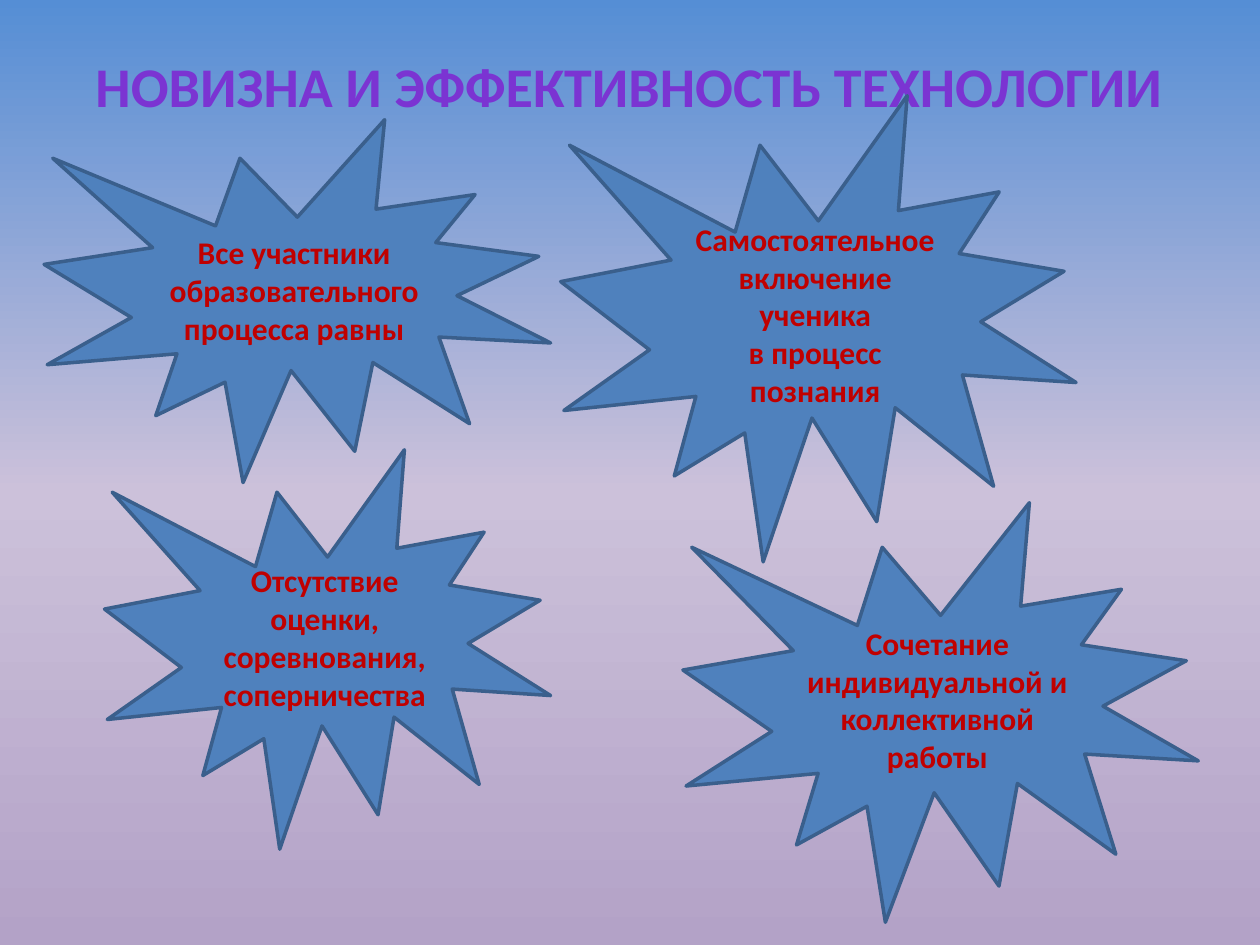
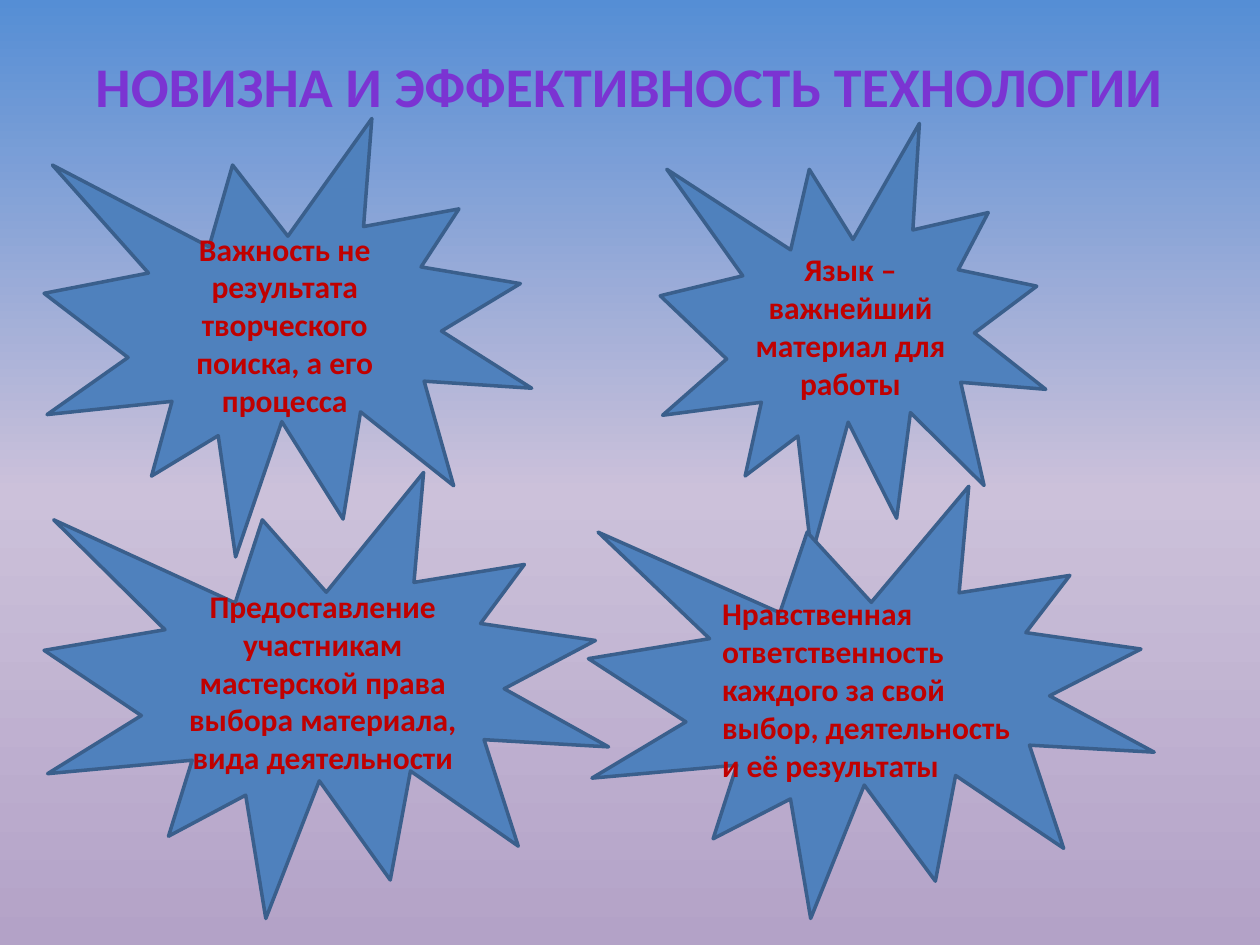
from copy import deepcopy

from pptx import Presentation
from pptx.dml.color import RGBColor
from pptx.enum.shapes import MSO_SHAPE as Shape
from pptx.enum.text import MSO_ANCHOR as Anchor, MSO_AUTO_SIZE as AutoSize, PP_ALIGN as Align
from pptx.oxml.ns import qn
from pptx.util import Inches, Pt

FONT = "Calibri"
PURPLE = RGBColor(0x7B, 0x34, 0xD2)
RED = RGBColor(0xC0, 0x00, 0x00)
BLUE = RGBColor(0x4F, 0x81, 0xBD)
DARK_BLUE = RGBColor(0x3A, 0x5F, 0x8C)
SKY = [
    (0, RGBColor(0x55, 0x8E, 0xD5)),
    (0.52, RGBColor(0xCC, 0xC1, 0xDA)),
    (1, RGBColor(0xB3, 0xA2, 0xC7)),
]

HEADING = "НОВИЗНА И ЭФФЕКТИВНОСТЬ ТЕХНОЛОГИИ"
HEADING_BOX = (-2, 0.36, 13.99, 1.18)

PAGES = [
    [
        ((0.35, 0.95, 4.02, 2.88), ["Все участники образовательного процесса равны"], Align.CENTER),
        ((0.83, 3.57, 3.54, 3.17), ["Отсутствие оценки, соревнования, соперничества"], Align.CENTER),
        ((4.45, 0.76, 4.09, 3.7),
         ["Самостоятельное", "включение ученика", "в процесс", "познания"], Align.CENTER),
        ((5.42, 3.99, 4.09, 3.33),
         ["Сочетание индивидуальной и коллективной работы"], Align.CENTER),
    ],
    [
        ((0.35, 0.94, 3.87, 3.48),
         ["Важность не результата творческого поиска, а его процесса"], Align.CENTER),
        ((0.35, 3.75, 4.48, 3.54),
         ["Предоставление участникам мастерской права выбора материала, вида деятельности"],
         Align.CENTER),
        ((5.24, 0.98, 3.06, 3.43), ["Язык – важнейший материал для работы"], Align.CENTER),
        ((4.67, 3.86, 4.49, 3.43),
         ["Нравственная ответственность каждого за свой выбор, деятельность и её результаты"],
         Align.LEFT),
    ],
]


def write(frame, lines, size=18, color=RED, align=Align.CENTER, anchor=Anchor.MIDDLE):
    frame.word_wrap = True
    frame.auto_size = AutoSize.NONE
    frame.vertical_anchor = anchor
    frame.text = "\n".join(lines)
    for paragraph in frame.paragraphs:
        paragraph.alignment = align
        font = paragraph.runs[0].font
        font.name, font.size, font.bold = FONT, Pt(size), True
        font.color.rgb = color


def paint_sky(master):
    fill = master.background.fill
    fill.gradient()
    fill.gradient_angle = 270
    stops = master.element.cSld.find(".//" + qn("a:gsLst"))
    stops.append(deepcopy(stops[0]))
    for stop, (position, color) in zip(fill.gradient_stops, SKY):
        stop.position = position
        stop.color.rgb = color


def add_heading(slide):
    heading = slide.shapes.title
    heading.left, heading.top, heading.width, heading.height = map(Inches, HEADING_BOX)
    write(heading.text_frame, [HEADING], size=32, color=PURPLE, anchor=Anchor.TOP)


def add_burst(slide, box, lines, align):
    burst = slide.shapes.add_shape(Shape.EXPLOSION1, *map(Inches, box))
    burst.shadow.inherit = False
    burst.fill.solid()
    burst.fill.fore_color.rgb = BLUE
    burst.line.color.rgb = DARK_BLUE
    burst.line.width = Pt(2)
    write(burst.text_frame, lines, align=align)


def main():
    deck = Presentation()
    deck.slide_width, deck.slide_height = Inches(10), Inches(7.5)
    paint_sky(deck.slide_master)
    title_only = deck.slide_layouts.get_by_name("Title Only")
    for bursts in PAGES:
        slide = deck.slides.add_slide(title_only)
        add_heading(slide)
        for box, lines, align in bursts:
            add_burst(slide, box, lines, align)
    deck.save("out.pptx")


if __name__ == "__main__":
    main()
